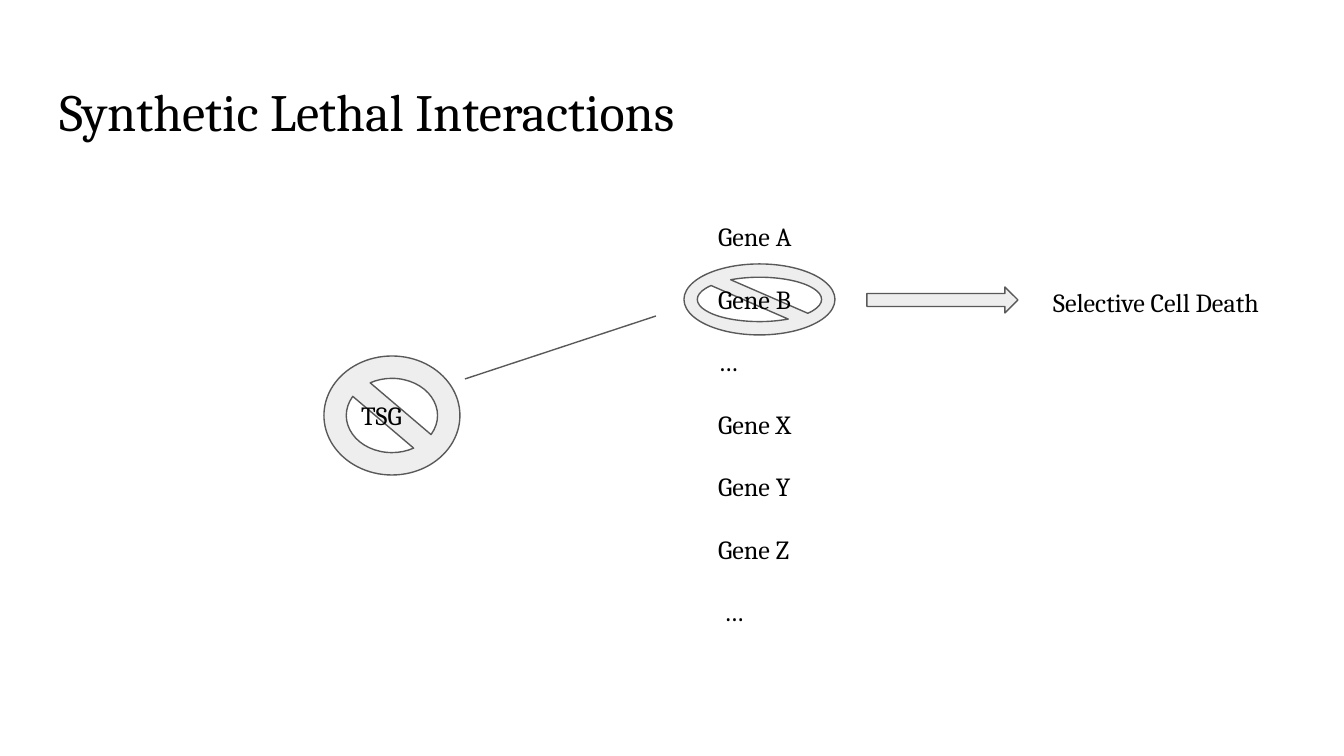
from pptx import Presentation
from pptx.dml.color import RGBColor
from pptx.enum.shapes import MSO_CONNECTOR as CONN, MSO_SHAPE as SHAPE
from pptx.enum.text import MSO_ANCHOR as ANCHOR, MSO_AUTO_SIZE as AUTO, PP_ALIGN as ALIGN
from pptx.oxml.ns import qn
from pptx.util import Inches, Pt
from lxml.etree import SubElement

PX_PER_INCH = 134.4
FONT = "Cambria"
BLACK, GREY, PALE = "000000", "595959", "EEEEEE"


def px(n):
    return Inches(n / PX_PER_INCH)


def color(value):
    return RGBColor.from_string(value)


def write(sp, *lines, size=14, gap=0):
    """Write one paragraph per line, with gap points between them."""
    tf = sp.text_frame
    tf.word_wrap = True
    tf.auto_size = AUTO.NONE
    tf.vertical_anchor = ANCHOR.TOP
    tf.margin_left = tf.margin_right = tf.margin_top = tf.margin_bottom = Inches(0.1)
    for i, line in enumerate(lines):
        p = tf.add_paragraph() if i else tf.paragraphs[0]
        p.alignment = ALIGN.LEFT
        p.space_before = Pt(gap if i else 0)
        r = p.add_run()
        r.text = line
        r.font.name = FONT
        r.font.size = Pt(size)
        r.font.color.rgb = color(BLACK)


def add_title(s, box, text):
    sp = s.shapes.title
    sp.left, sp.top, sp.width, sp.height = map(px, box)
    write(sp, text, size=28)


def add_text(s, box, *lines, **fmt):
    write(s.shapes.add_textbox(*map(px, box)), *lines, **fmt)


def outline(sp):
    sp.line.color.rgb = color(GREY)
    sp.line.width = Pt(0.75)


def add_shape(s, kind, box, *adjustments):
    sp = s.shapes.add_shape(kind, *map(px, box))
    for i, value in enumerate(adjustments):
        sp.adjustments[i] = value
    sp.shadow.inherit = False
    sp.fill.solid()
    sp.fill.fore_color.rgb = color(PALE)
    outline(sp)


def add_line(s, *ends):
    line = s.shapes.add_connector(CONN.STRAIGHT, *map(px, ends))
    outline(line)
    SubElement(line._element.spPr, qn("a:effectLst"))


def main():
    prs = Presentation()
    prs.slide_width, prs.slide_height = px(1344), px(756)
    s = prs.slides.add_slide(prs.slide_layouts[5])
    add_title(s, (46, 66, 1253, 85), "Synthetic Lethal Interactions")

    # Knocked-out genes, behind their labels
    for box in ((684, 264, 151, 71), (324, 356, 136, 119)):
        add_shape(s, SHAPE.NO_SYMBOL, box, 0.188)

    # Tumour suppressor and its candidate partners
    add_text(s, (348, 386, 105, 59), "TSG")
    add_text(s, (705, 207, 188, 395), "Gene A", "Gene B", "…",
             "Gene X", "Gene Y", "Gene Z", " …", gap=16.7)
    add_line(s, 465, 379, 656, 316)

    # Outcome
    add_shape(s, SHAPE.RIGHT_ARROW, (867, 287, 151, 26), 0.5, 0.5)
    add_text(s, (1040, 273, 270, 50), "Selective Cell Death")

    prs.save("out.pptx")


if __name__ == "__main__":
    main()
